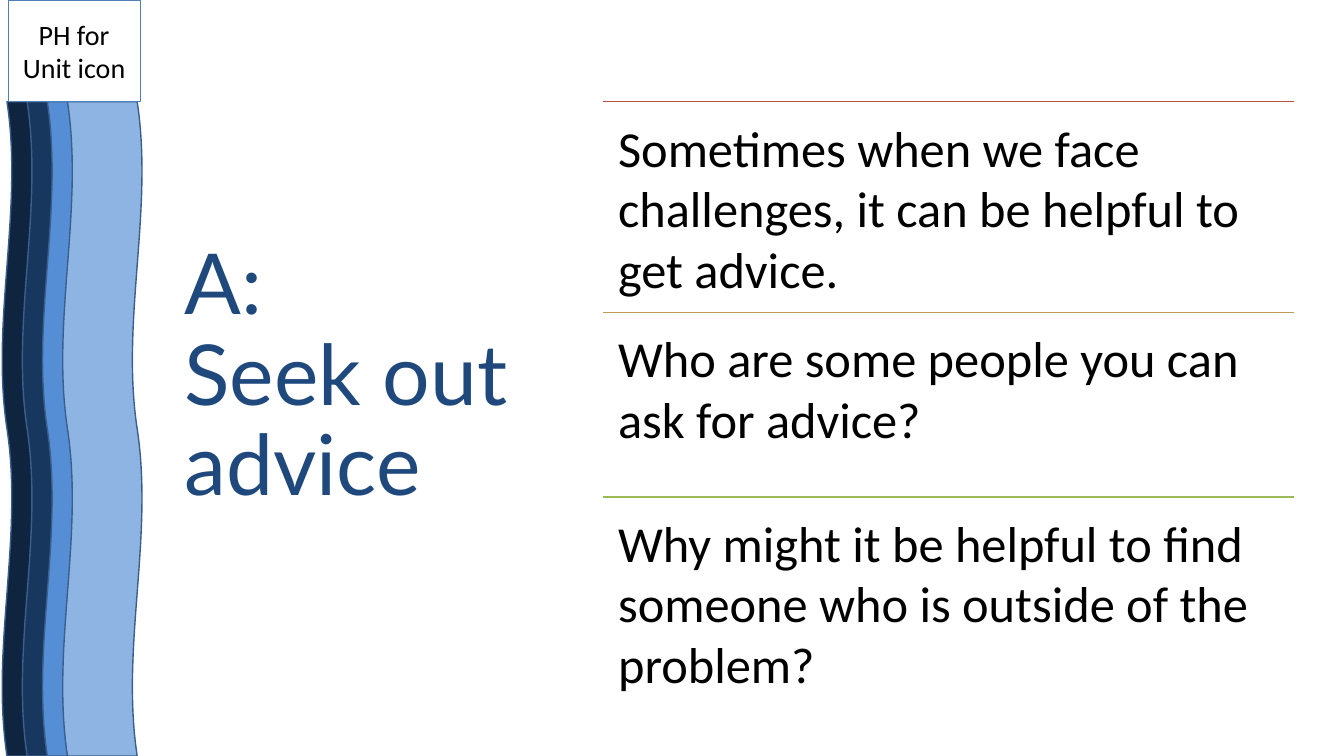
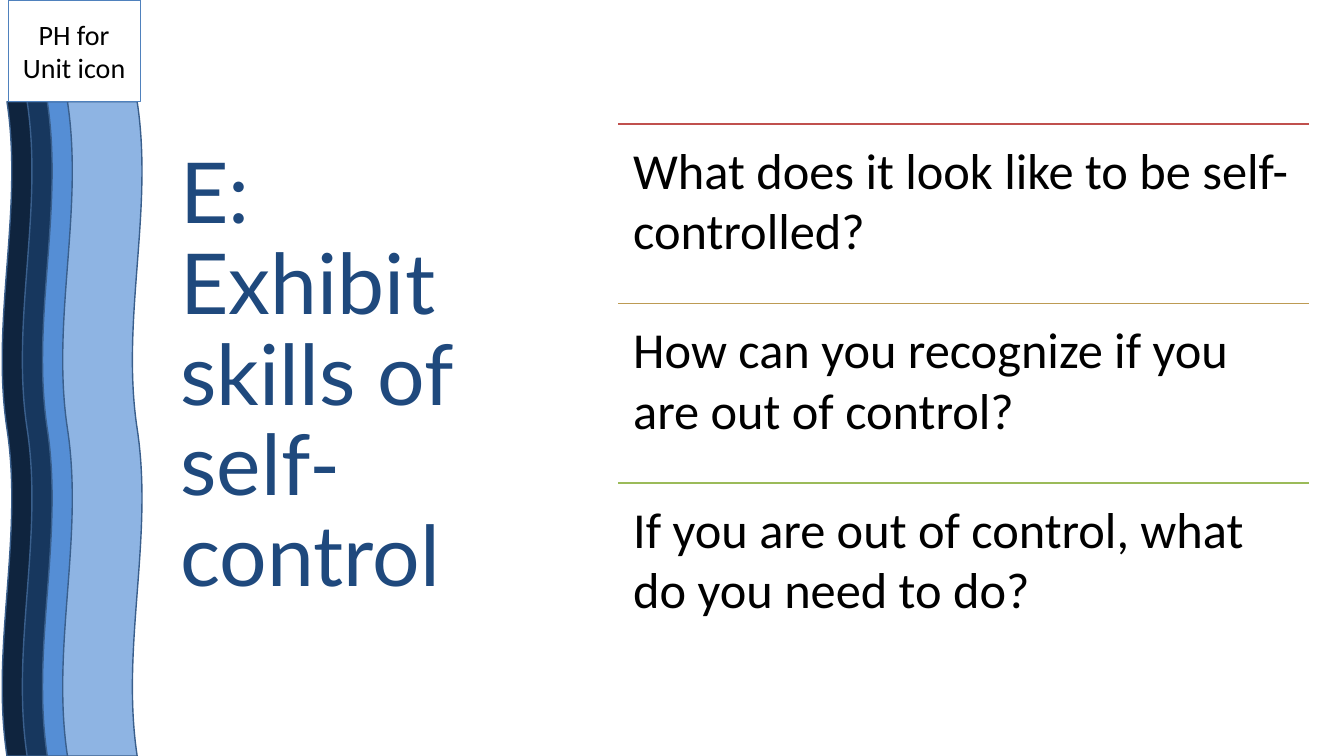
from dataclasses import dataclass

from lxml import etree
from pptx import Presentation
from pptx import util as u
from pptx.dml.color import RGBColor
from pptx.enum import shapes, text
from pptx.oxml import ns
from pptx.slide import Slide
from pptx.text.text import TextFrame


@dataclass(frozen=True)
class Theme:
    title_font: str = "Lato"
    body_font: str = "Calibri"
    title_size: int = 60
    body_size: int = 36
    icon_size: int = 20
    title: str = "1F497D"
    body: str = "000000"
    wave_fills: tuple[str, ...] = ("0F243E", "17375E", "558ED5", "8EB4E3")
    wave_line: str = "3A5F8C"
    icon_line: str = "4F81BD"
    dividers: tuple[str, ...] = ("C0504D", "BD9B53", "9BBB59")


@dataclass(frozen=True)
class Section:
    text: str
    height: float


@dataclass(frozen=True)
class Lesson:
    title: str
    title_left: float
    sections_left: float
    sections_top: float
    sections: tuple[Section, ...]


THEME = Theme()
SECTION_WIDTH = 6.85
SECTION_INSET = 0.15
WAVE_STEP = 0.2

LESSONS = (
    Lesson("A: \vSeek out advice", 1.73, 5.98, 1.01, (
        Section("Sometimes when we face challenges, it can be helpful to get advice.", 2.09),
        Section("Who are some people you can ask for advice?", 1.83),
        Section("Why might it be helpful to find someone who is outside of the problem?", 2.09),
    )),
    Lesson("E:\vExhibit skills of self-control", 1.69, 6.13, 1.23, (
        Section("What does it look like to be self-controlled?", 1.78),
        Section("How can you recognize if you are out of control?", 1.78),
        Section("If you are out of control, what do you need to do?", 1.78),
    )),
)


def rgb(value: str) -> RGBColor:
    return RGBColor.from_string(value)


def write(frame: TextFrame, words: str, font: str, size: int, color: str,
          alignment: text.PP_ALIGN = text.PP_ALIGN.LEFT) -> None:
    frame.text = words
    frame.word_wrap = True
    frame.auto_size = text.MSO_AUTO_SIZE.NONE
    for paragraph in frame.paragraphs:
        paragraph.alignment = alignment
        for run in paragraph.runs:
            run.font.name = font
            run.font.size = u.Pt(size)
            run.font.color.rgb = rgb(color)


def add_side_band(slide: Slide) -> None:
    """Draw the overlapping upright waves and the unit icon box above them."""
    for index, fill in enumerate(THEME.wave_fills):
        wave = slide.shapes.add_shape(
            shapes.MSO_SHAPE.DOUBLE_WAVE, u.Inches(-2.83 + index * WAVE_STEP),
            u.Inches(3.86), u.Inches(6.49), u.Inches(0.79))
        wave.rotation = 270
        wave.shadow.inherit = False
        wave.fill.solid()
        wave.fill.fore_color.rgb = rgb(fill)
        wave.line.color.rgb = rgb(THEME.wave_line)
        wave.line.width = u.Pt(1)

    icon_box = slide.shapes.add_shape(
        shapes.MSO_SHAPE.RECTANGLE, u.Inches(0.08), 0, u.Inches(1.31), u.Inches(1.01))
    icon_box.shadow.inherit = False
    icon_box.fill.background()
    icon_box.line.color.rgb = rgb(THEME.icon_line)
    icon_box.line.width = u.Pt(0.75)
    icon_box.text_frame.vertical_anchor = text.MSO_ANCHOR.MIDDLE
    write(icon_box.text_frame, "PH for Unit icon", THEME.body_font, THEME.icon_size,
          THEME.body, text.PP_ALIGN.CENTER)


def set_title(slide: Slide, lesson: Lesson) -> None:
    title = slide.shapes.title
    title.left, title.top = u.Inches(lesson.title_left), u.Inches(0.74)
    title.width, title.height = u.Inches(4.16), u.Inches(6.02)
    write(title.text_frame, lesson.title, THEME.title_font, THEME.title_size, THEME.title)
    title.text_frame.vertical_anchor = text.MSO_ANCHOR.MIDDLE
    title.text_frame.paragraphs[0].line_spacing = 0.9


def add_divider(slide: Slide, left: float, top: float, color: str) -> None:
    divider = slide.shapes.add_connector(
        shapes.MSO_CONNECTOR.STRAIGHT, u.Inches(left), u.Inches(top),
        u.Inches(left + SECTION_WIDTH), u.Inches(top))
    divider.line.color.rgb = rgb(color)
    divider.line.width = u.Pt(1)
    etree.SubElement(divider._element.spPr, ns.qn("a:effectLst"))


def add_sections(slide: Slide, lesson: Lesson) -> None:
    """Stack the sections, each one under its own divider."""
    left, top = lesson.sections_left, lesson.sections_top
    for section, color in zip(lesson.sections, THEME.dividers):
        add_divider(slide, left, top, color)
        box = slide.shapes.add_textbox(
            u.Inches(left), u.Inches(top), u.Inches(SECTION_WIDTH), u.Inches(section.height))
        frame = box.text_frame
        frame.margin_left = frame.margin_right = u.Inches(SECTION_INSET)
        frame.margin_top = frame.margin_bottom = u.Inches(SECTION_INSET)
        write(frame, section.text, THEME.body_font, THEME.body_size, THEME.body)
        top += section.height


def main() -> None:
    presentation = Presentation()
    presentation.slide_width = u.Inches(13.33)
    presentation.slide_height = u.Inches(7.5)
    title_only = presentation.slide_layouts.get_by_name("Title Only")
    for lesson in LESSONS:
        slide = presentation.slides.add_slide(title_only)
        add_side_band(slide)
        set_title(slide, lesson)
        add_sections(slide, lesson)
    presentation.save("out.pptx")


if __name__ == "__main__":
    main()
